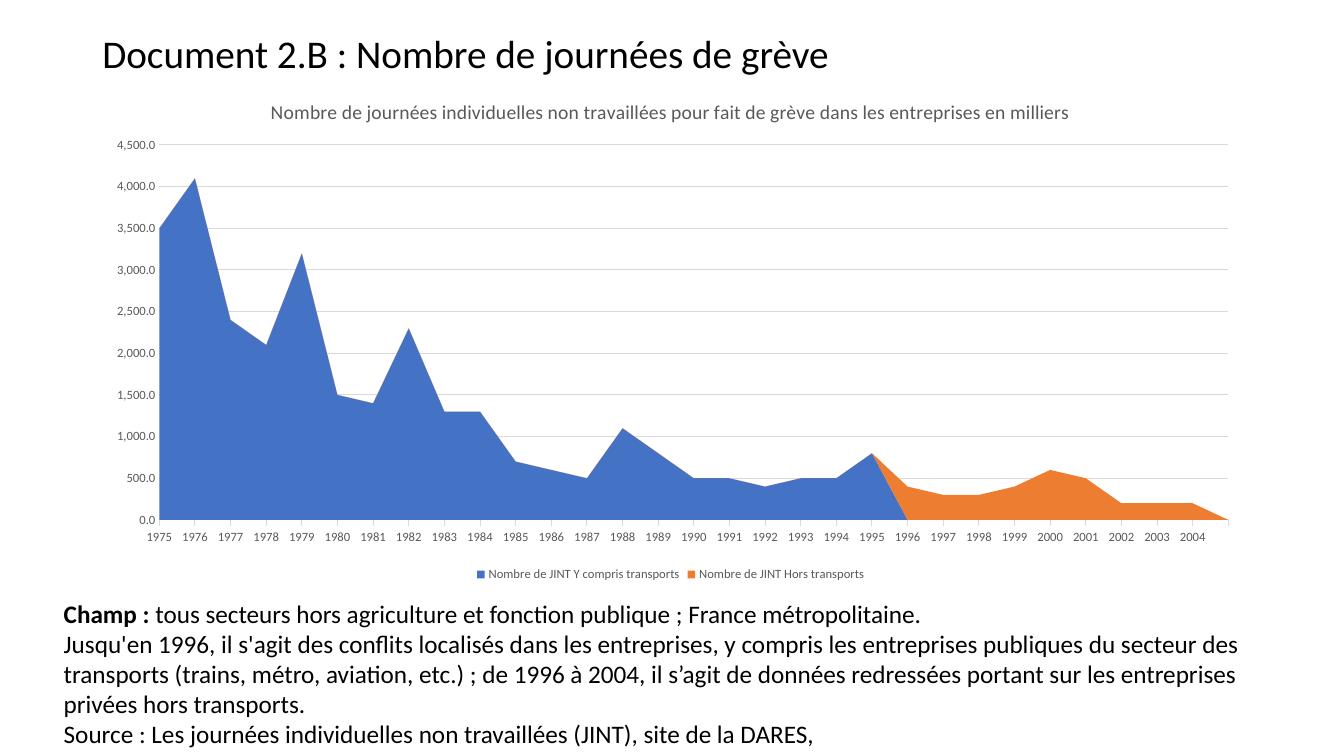
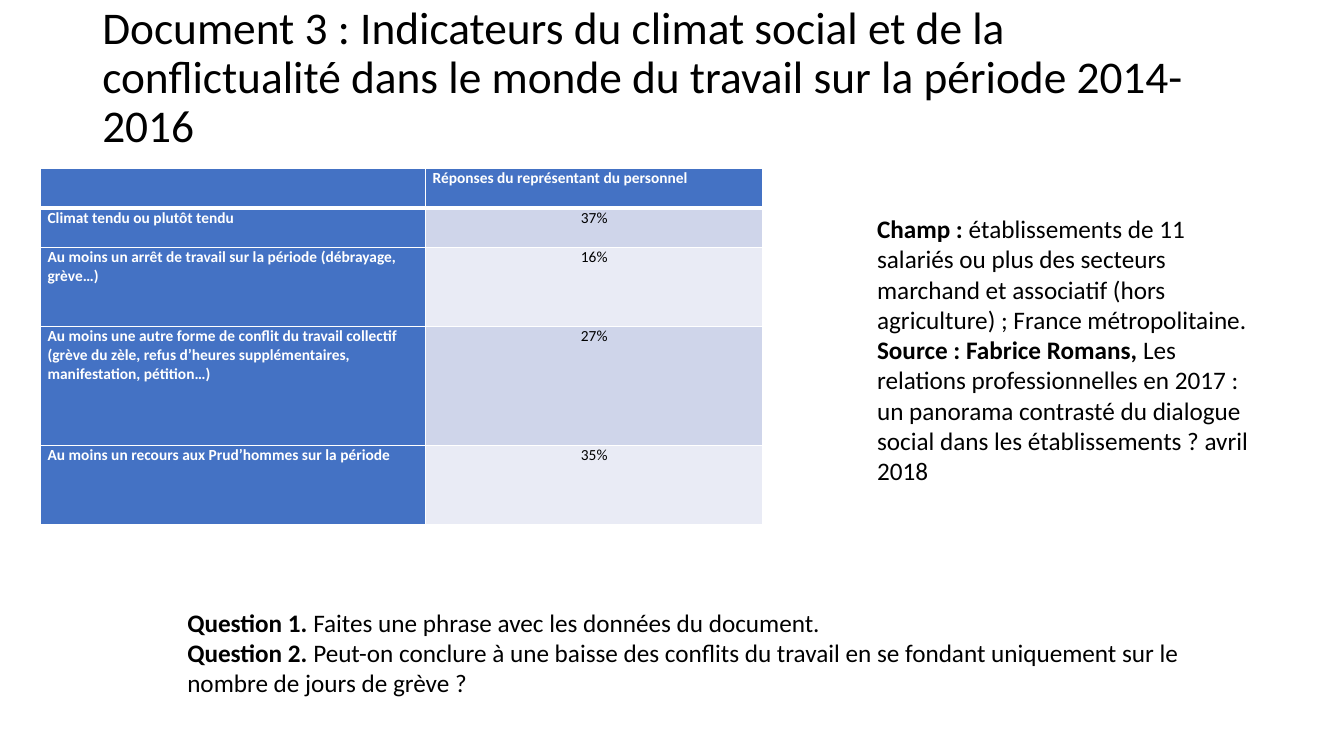
from lxml.etree import SubElement
from pptx import Presentation
from pptx.chart.data import CategoryChartData
from pptx.dml.color import RGBColor
from pptx.enum.chart import XL_CHART_TYPE as ChartType, XL_LEGEND_POSITION as LegendPos
from pptx.enum.chart import XL_TICK_MARK as Tick
from pptx.enum.text import MSO_ANCHOR as Anchor, PP_ALIGN as Align
from pptx.oxml import parse_xml
from pptx.oxml.ns import nsdecls, qn
from pptx.util import Pt

# Shared style
FONT = "Calibri"
BLACK = RGBColor(0x00, 0x00, 0x00)
WHITE = RGBColor(0xFF, 0xFF, 0xFF)
GRAY = RGBColor(0x59, 0x59, 0x59)
GRID = RGBColor(0xD9, 0xD9, 0xD9)
BLUE = RGBColor(0x44, 0x72, 0xC4)
ORANGE = RGBColor(0xED, 0x7D, 0x31)
BAND_DARK = RGBColor(0xCF, 0xD5, 0xEA)
BAND_LIGHT = RGBColor(0xE9, 0xEB, 0xF5)

# Strike days in thousands, 1975-1995 then 1996-2004
WITH_TRANSPORT = [3500, 4100, 2400, 2100, 3200, 1500, 1400, 2300, 1300, 1300, 700,
                  600, 500, 1100, 800, 500, 500, 400, 500, 500, 800]
WITHOUT_TRANSPORT = [400, 300, 300, 400, 600, 500, 200, 200, 200]

CLIMATE_ROWS = [  # label, answer, height in lines
    ("", "Réponses du représentant du personnel", 1),
    ("Climat tendu ou plutôt tendu", "37%", 1),
    ("Au moins un arrêt de travail sur la période (débrayage, grève…)", "16%", 2),
    ("Au moins une autre forme de conflit du travail collectif (grève du zèle, "
     "refus d’heures supplémentaires, manifestation, pétition…)", "27%", 3),
    ("Au moins un recours aux Prud’hommes sur la période", "35%", 2),
]
ROW_LINE = 28.25


def style_font(font, size, color, bold=False):
    font.name, font.size, font.bold = FONT, Pt(size), bold
    font.color.rgb = color


def add_box(slide, box):
    frame = slide.shapes.add_textbox(*map(Pt, box)).text_frame
    frame.word_wrap = True
    return frame


def add_title(slide, text, size, height):
    frame = add_box(slide, (66, 0, 828, height))
    frame.vertical_anchor = Anchor.MIDDLE
    frame.text = text
    title = frame.paragraphs[0]
    title.line_spacing = 0.9
    style_font(title.runs[0].font, size, BLACK)


def add_notes(slide, box, notes):
    """Each note is a bold lead followed by plain text."""
    frame = add_box(slide, box)
    for index, note in enumerate(notes):
        paragraph = frame.add_paragraph() if index else frame.paragraphs[0]
        for text, bold in zip(note, (True, False)):
            if text:
                run = paragraph.add_run()
                run.text = text
                style_font(run.font, 18, BLACK, bold)


def add_strike_chart(slide, box):
    data = CategoryChartData(number_format="#,##0.0")
    data.categories = [str(year) for year in range(1975, 2005)] + [""]
    before, after = len(WITH_TRANSPORT), len(WITHOUT_TRANSPORT)
    data.add_series("Nombre de JINT Y compris transports",
                    WITH_TRANSPORT + [None] * (after + 1))
    data.add_series("Nombre de JINT Hors transports",
                    [None] * before + WITHOUT_TRANSPORT + [None])
    chart = slide.shapes.add_chart(ChartType.AREA_STACKED, *map(Pt, box), data).chart
    style_font(chart.font, 10, BLACK)
    chart.plots[0].vary_by_categories = False
    for series, color in zip(chart.plots[0].series, (BLUE, ORANGE)):
        series.format.fill.solid()
        series.format.fill.fore_color.rgb = color

    # Title and legend
    chart.has_title = True
    heading = chart.chart_title.text_frame
    heading.text = ("Nombre de journées individuelles non travaillées pour fait de grève "
                    "dans les entreprises en milliers")
    style_font(heading.paragraphs[0].runs[0].font, 14, GRAY)
    chart.chart_title.include_in_layout = False
    chart.has_legend = True
    chart.legend.position = LegendPos.BOTTOM
    chart.legend.include_in_layout = False
    style_font(chart.legend.font, 9, GRAY)

    # Axes
    years, days = chart.category_axis, chart.value_axis
    for axis in (years, days):
        style_font(axis.tick_labels.font, 9, GRAY)
        axis.minor_tick_mark = Tick.NONE
    years.has_major_gridlines = False
    years.major_tick_mark = Tick.OUTSIDE
    days.major_tick_mark = Tick.NONE
    days.format.line.fill.background()
    days.minimum_scale, days.maximum_scale, days.major_unit = 0, 4500, 500
    days.has_major_gridlines = True
    days.tick_labels.number_format = "#,##0.0"
    days.tick_labels.number_format_is_linked = False
    for line in (years.format.line, days.major_gridlines.format.line):
        line.color.rgb = GRID
        line.width = Pt(0.75)

    # Areas start on the axis; fixed plot region
    space = chart.element
    for cross in space.iter(qn("c:crossBetween")):
        cross.set("val", "midCat")
    plot_area = space.find(".//" + qn("c:plotArea"))
    for layout in plot_area.findall(qn("c:layout")):
        plot_area.remove(layout)
    layout = parse_xml(f"<c:layout {nsdecls('c')}><c:manualLayout/></c:layout>")
    for tag, value in (("layoutTarget", "inner"), ("xMode", "edge"), ("yMode", "edge"),
                       ("x", "0.06"), ("y", "0.13"), ("w", "0.92"), ("h", "0.74")):
        SubElement(layout[0], qn("c:" + tag)).set("val", value)
    plot_area.insert(0, layout)


def set_borders(cell, bottom):
    properties = cell._tc.get_or_add_tcPr()
    for index, (side, width) in enumerate((("L", 1), ("R", 1), ("T", 1), ("B", bottom))):
        properties.insert(index, parse_xml(
            f'<a:ln{side} {nsdecls("a")} w="{Pt(width)}"><a:solidFill>'
            f'<a:srgbClr val="{WHITE}"/></a:solidFill></a:ln{side}>'))


def add_climate_table(slide, left, top, widths):
    height = ROW_LINE * sum(lines for *_, lines in CLIMATE_ROWS)
    table = slide.shapes.add_table(len(CLIMATE_ROWS), len(widths), Pt(left), Pt(top),
                                   Pt(sum(widths)), Pt(height)).table
    for column, width in zip(table.columns, widths):
        column.width = Pt(width)
    for r, (*texts, lines) in enumerate(CLIMATE_ROWS):
        table.rows[r].height = Pt(ROW_LINE * lines)
        for c, text in enumerate(texts):
            cell = table.cell(r, c)
            is_label = r == 0 or c == 0
            cell.margin_left = cell.margin_right = Pt(5)
            cell.margin_top = cell.margin_bottom = 0
            cell.fill.solid()
            cell.fill.fore_color.rgb = (BLUE if is_label else
                                        BAND_DARK if r % 2 else BAND_LIGHT)
            set_borders(cell, 1 if r else 3)
            cell.text = text
            paragraph = cell.text_frame.paragraphs[0]
            paragraph.alignment = Align.LEFT if is_label else Align.CENTER
            for part in (paragraph, *paragraph.runs):
                style_font(part.font, 11, WHITE if is_label else BLACK, is_label)


def build_strike_slide(slide):
    add_title(slide, "Document 2.B : Nombre de journées de grève", 28, 79)
    add_strike_chart(slide, (64, 56.5, 830, 362))
    add_notes(slide, (38.4, 423.5, 855, 117), [
        ("Champ : ", "tous secteurs hors agriculture et fonction publique ; "
                     "France métropolitaine."),
        ("", "Jusqu'en 1996, il s'agit des conflits localisés dans les entreprises, "
             "y compris les entreprises publiques du secteur des transports (trains, métro, "
             "aviation, etc.) ; de 1996 à 2004, il s’agit de données redressées portant sur "
             "les entreprises privées hors transports."),
        ("", "Source : Les journées individuelles non travaillées (JINT), "
             "site de la DARES,"),
    ])


def build_climate_slide(slide):
    add_title(slide, "Document 3 : Indicateurs du climat social et de la conflictualité "
                     "dans le monde du travail sur la période 2014-2016", 32.4, 113)
    add_climate_table(slide, 29, 120.5, (275, 241))
    add_notes(slide, (126.7, 430, 767, 73), [
        ("Question 1. ", "Faites une phrase avec les données du document."),
        ("Question 2. ", "Peut-on conclure à une baisse des conflits du travail en se "
                         "fondant uniquement sur le nombre de jours de grève ?"),
    ])
    add_notes(slide, (619.4, 149, 292, 204), [
        ("Champ : ", "établissements de 11 salariés ou plus des secteurs marchand et "
                     "associatif (hors agriculture) ; France métropolitaine."),
        ("Source : Fabrice Romans, ", "Les relations professionnelles en 2017 : un "
         "panorama contrasté du dialogue social dans les établissements ? avril 2018"),
    ])


def main():
    deck = Presentation()
    deck.slide_width, deck.slide_height = Pt(960), Pt(540)
    for build in (build_strike_slide, build_climate_slide):
        build(deck.slides.add_slide(deck.slide_layouts[6]))
    deck.save("out.pptx")


if __name__ == "__main__":
    main()
